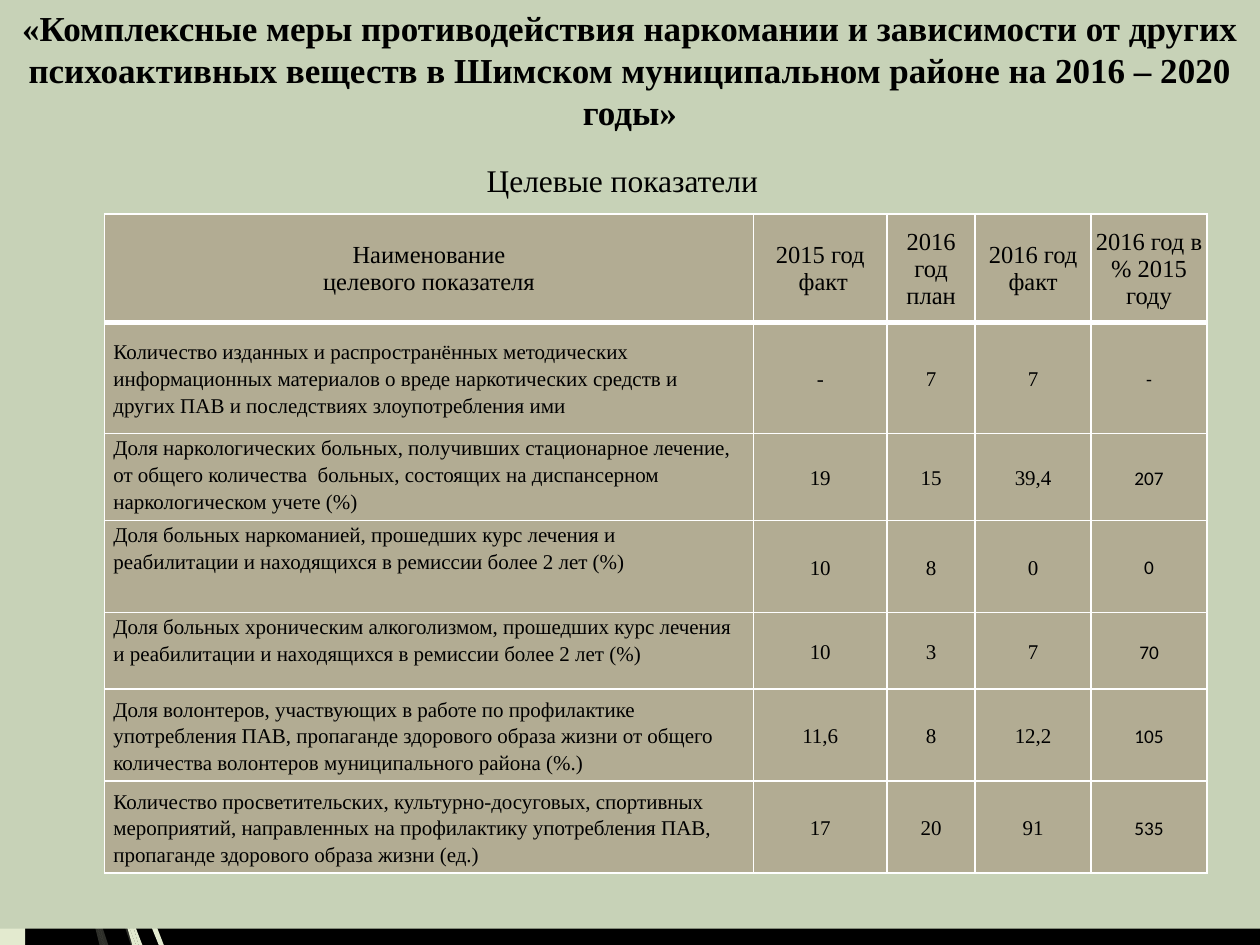
from lxml import etree
from pptx import Presentation
from pptx.dml.color import RGBColor
from pptx.enum.shapes import MSO_SHAPE as Shape
from pptx.enum.text import MSO_ANCHOR as Anchor, PP_ALIGN as Align
from pptx.oxml.ns import qn
from pptx.util import Inches, Pt

COLORS = {
    "background": "000000", "text": "000000", "panel": "C7D2B7",
    "ornament": "E3EACF", "cell": "B2AC93", "border": "FFFFFF",
}
SERIF, SANS = "Times New Roman", "Calibri"


def paint(shape, color):
    shape.shadow.inherit = False
    shape.fill.solid()
    shape.fill.fore_color.rgb = RGBColor.from_string(COLORS[color])
    shape.line.fill.background()


def write(frame, paragraphs, size, font=SERIF, align=Align.CENTER, bold=False, spacing=None):
    """Fill a text frame; a newline inside a paragraph becomes a line break."""
    frame.word_wrap = True
    for index, text in enumerate(paragraphs):
        paragraph = frame.paragraphs[0] if index == 0 else frame.add_paragraph()
        paragraph.alignment = align
        if spacing:
            paragraph.line_spacing = spacing
        for number, line in enumerate(text.split("\n")):
            if number:
                paragraph.add_line_break()
            run = paragraph.add_run()
            run.text = line
            run.font.size, run.font.name, run.font.bold = Pt(size), font, bold
            run.font.color.rgb = RGBColor.from_string(COLORS["text"])


prs = Presentation()
prs.slide_width, prs.slide_height = Inches(10), Inches(7.5)
W, H = prs.slide_width, prs.slide_height
slide = prs.slides.add_slide(prs.slide_layouts[6])
slide.background.fill.solid()
slide.background.fill.fore_color.rgb = RGBColor.from_string(COLORS["background"])

# Grass blades that show below the panel: outline and opacity in percent
blades = [
    ([(0.61, 5.96), (0.61, 6.1), (0.85, 6.94), (1.04, 7.5), (1.08, 7.5), (0.88, 6.92), (0.64, 6.07)], 20),
    ([(0.73, 7.11), (0.83, 7.5), (0.86, 7.5)], 20),
    ([(0.7, 7.14), (0.79, 7.5), (0.82, 7.5)], 20),
    ([(0.65, 6.83), (0.7, 7.14), (0.82, 7.5), (0.83, 7.5), (0.73, 7.11)], 20),
    ([(0.91, 6.41), (0.91, 6.56), (1.09, 7.08), (1.26, 7.5), (1.3, 7.5), (1.13, 7.06)], 100),
    ([(1.01, 7.19), (1.1, 7.5), (1.13, 7.5)], 100),
    ([(0.97, 7.22), (1.05, 7.5), (1.08, 7.5)], 100),
    ([(0.91, 6.91), (0.97, 7.22), (1.08, 7.5), (1.1, 7.5), (1.01, 7.19)], 100),
]
for outline, opacity in blades:
    start, *rest = [(Inches(x), Inches(y)) for x, y in outline]
    builder = slide.shapes.build_freeform(*start)
    builder.add_line_segments(rest)
    blade = builder.convert_to_shape()
    paint(blade, "ornament")
    if opacity < 100:
        fill_color = next(blade.fill._xPr.iter(qn("a:srgbClr")))
        etree.SubElement(fill_color, qn("a:alpha"), val=str(opacity * 1000))

edge = slide.shapes.add_shape(Shape.RECTANGLE, 0, 0, int(W * 0.02), H)
paint(edge, "ornament")

panel = slide.shapes.add_shape(Shape.RECTANGLE, 0, 0, W, Inches(7.37))
paint(panel, "panel")
panel.text_frame.vertical_anchor = Anchor.TOP
write(panel.text_frame, [
    "«Комплексные меры противодействия наркомании и зависимости от других психоактивных "
    "веществ в Шимском муниципальном районе на 2016 – 2020 годы»"], 20, bold=True)

headings = [
    ["Наименование\nцелевого показателя"], ["2015 год\n факт"], ["2016 год", "план"],
    ["2016 год", "факт"], ["2016 год в % 2015 году"],
]
indicators = [
    ("Количество изданных и распространённых методических информационных материалов о вреде "
     "наркотических средств и других ПАВ и последствиях злоупотребления ими", "-", "7", "7", "-"),
    ("Доля наркологических больных, получивших стационарное лечение, от общего количества  больных, "
     "состоящих на диспансерном наркологическом учете (%)", "19", "15", "39,4", "207"),
    ("Доля больных наркоманией, прошедших курс лечения и реабилитации и находящихся в ремиссии "
     "более 2 лет (%)", "10", "8", "0", "0"),
    ("Доля больных хроническим алкоголизмом, прошедших курс лечения и реабилитации и находящихся "
     "в ремиссии более 2 лет (%)", "10", "3", "7", "70"),
    ("Доля волонтеров, участвующих в работе по профилактике употребления ПАВ, пропаганде здорового "
     "образа жизни от общего количества волонтеров муниципального района (%.)",
     "11,6", "8", "12,2", "105"),
    ("Количество просветительских, культурно-досуговых, спортивных мероприятий, направленных на "
     "профилактику употребления ПАВ, пропаганде здорового образа жизни (ед.)",
     "17", "20", "91", "535"),
]
top_anchored_rows = (2, 3, 4)
column_widths = [5.15, 1.06, 0.7, 0.92, 0.92]
row_heights = [0.86, 0.88, 0.69, 0.73, 0.61, 0.73, 0.73]

table = slide.shapes.add_table(
    len(row_heights), len(column_widths), Inches(0.83), Inches(1.7),
    Inches(sum(column_widths)), Inches(sum(row_heights))).table
for column, width in zip(table.columns, column_widths):
    column.width = Inches(width)
for row, height in zip(table.rows, row_heights):
    row.height = Inches(height)

content = [headings] + [[[text] for text in indicator] for indicator in indicators]
for r, row in enumerate(content):
    for c, paragraphs in enumerate(row):
        cell = table.cell(r, c)
        cell.margin_left = cell.margin_right = Inches(0.07 if r else 0.01)
        cell.margin_top, cell.margin_bottom = Inches(0 if r else 0.01), 0
        cell.vertical_anchor = Anchor.TOP if c == 0 and r in top_anchored_rows else Anchor.MIDDLE
        if r == 0:
            write(cell.text_frame, paragraphs, 14)
        elif c == 0:
            write(cell.text_frame, paragraphs, 12, align=Align.LEFT, spacing=1.15)
        elif c == len(row) - 1:
            write(cell.text_frame, paragraphs, 11, font=SANS, spacing=1.15)
        else:
            write(cell.text_frame, paragraphs, 12, spacing=1.15)

        properties = cell._tc.get_or_add_tcPr()
        for side in ("lnL", "lnR", "lnT", "lnB"):
            under_heading = (r, side) in ((0, "lnB"), (1, "lnT"))
            border = etree.SubElement(properties, qn(f"a:{side}"), w=str(Pt(3 if under_heading else 1)))
            solid = etree.SubElement(border, qn("a:solidFill"))
            etree.SubElement(solid, qn("a:srgbClr"), val=COLORS["border"])
        cell.fill.solid()
        cell.fill.fore_color.rgb = RGBColor.from_string(COLORS["cell"])

subtitle = slide.shapes.add_textbox(Inches(2.54), Inches(1.23), Inches(4.8), Inches(0.4))
write(subtitle.text_frame, ["Целевые показатели"], 18)

prs.save("out.pptx")
